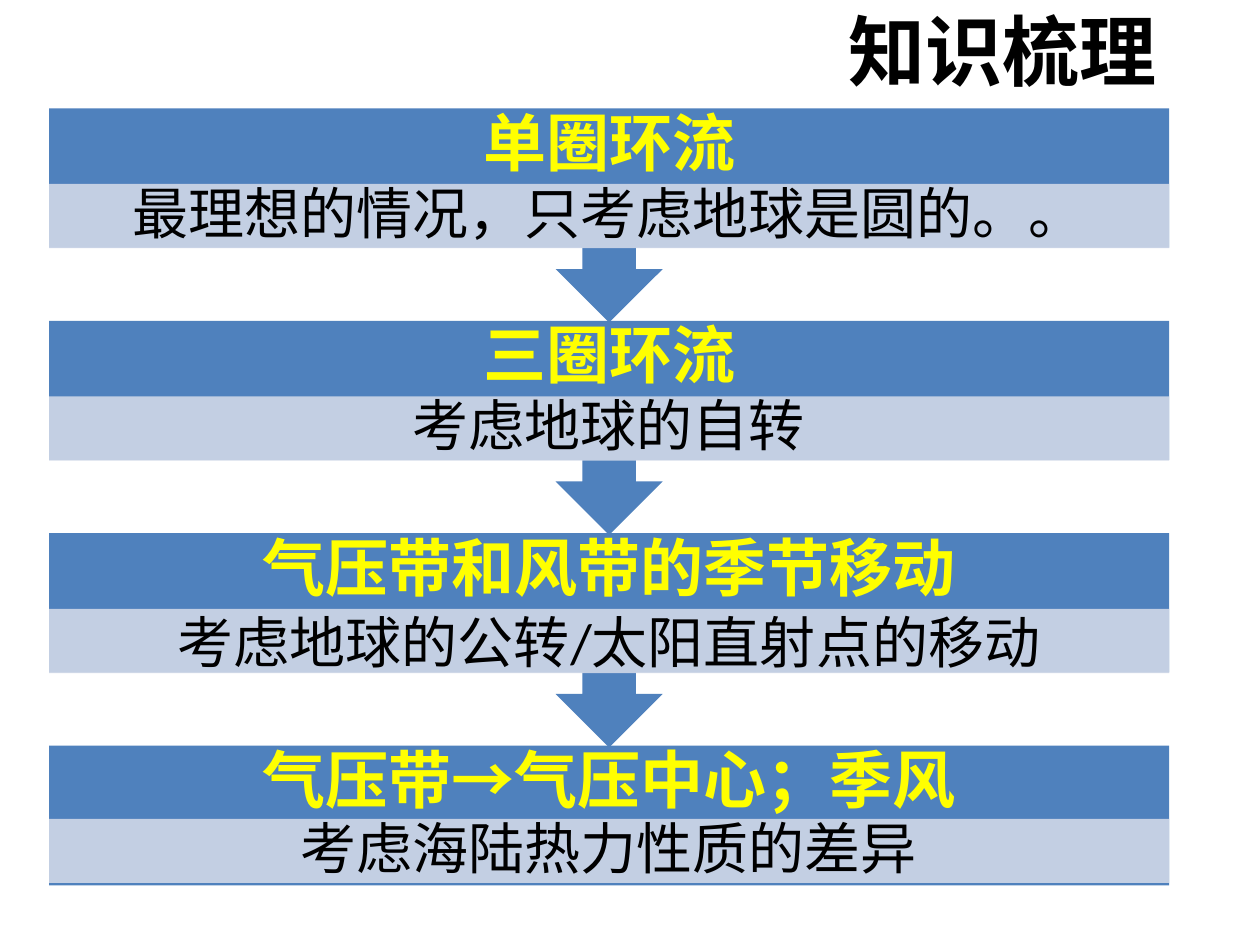
from pptx import Presentation
from pptx.dml.color import RGBColor
from pptx.enum.shapes import MSO_SHAPE as Shape
from pptx.enum.text import MSO_ANCHOR as Anchor, PP_ALIGN as Align
from pptx.oxml.xmlchemy import OxmlElement
from pptx.util import Pt

HEADING = "知识梳理"
STEPS = [
    ("单圈环流", "最理想的情况，只考虑地球是圆的。。", 0.9),
    ("三圈环流", "考虑地球的自转", 0.9),
    ("气压带和风带的季节移动", "考虑地球的公转/太阳直射点的移动", 1.0),
    ("气压带→气压中心；季风", "考虑海陆热力性质的差异", 0.9),
]
THEME = {
    "block": "4F81BD",
    "band": "D0D8E8",
    "band_opacity": 90,
    "heading": {"size": 44, "color": "000000", "bold": True},
    "step": {"size": 36, "color": "FFFF00", "bold": True},
    "reason": {"size": 32, "color": "000000", "bold": False},
    "font": "Calibri",
}
LEFT, TOP, WIDTH = 28.1, 61.9, 640
PITCH = 121.4
CALLOUT_HEIGHT, LAST_HEIGHT = 122.4, 79.9
STEP_HEIGHT, LAST_STEP_HEIGHT, BAND_HEIGHT = 43.2, 41.8, 36.7
STEP_INSETS = (20.16, 20.16)
REASON_INSETS = (18, 2.88)


def add_block(slide, kind, box, color, opacity=100):
    shape = slide.shapes.add_shape(kind, *map(Pt, box))
    shape.shadow.inherit = False
    shape.fill.solid()
    shape.fill.fore_color.rgb = RGBColor.from_string(color)
    shape.line.fill.background()
    if opacity < 100:
        alpha = OxmlElement("a:alpha")
        alpha.set("val", str(opacity * 1000))
        shape.fill._xPr.find(".//{*}srgbClr").append(alpha)
    return shape


def add_text(slide, text, box, style, insets, align=Align.CENTER, spacing=1.0):
    frame = slide.shapes.add_textbox(*map(Pt, box)).text_frame
    across, down = map(Pt, insets)
    frame_format = {
        "word_wrap": True, "vertical_anchor": Anchor.MIDDLE,
        "margin_left": across, "margin_right": across,
        "margin_top": down, "margin_bottom": down,
    }
    for name, value in frame_format.items():
        setattr(frame, name, value)
    paragraph = frame.paragraphs[0]
    paragraph.alignment = align
    paragraph.line_spacing = spacing
    run = paragraph.add_run()
    run.text = text
    font_format = {"name": THEME["font"], "size": Pt(style["size"]), "bold": style["bold"]}
    for name, value in font_format.items():
        setattr(run.font, name, value)
    run.font.color.rgb = RGBColor.from_string(style["color"])


def add_step(slide, index):
    step, reason, reason_spacing = STEPS[index]
    last = index == len(STEPS) - 1
    top = TOP + index * PITCH
    if last:
        add_block(slide, Shape.RECTANGLE, (LEFT, top, WIDTH, LAST_HEIGHT), THEME["block"])
    else:
        callout = add_block(slide, Shape.UP_ARROW_CALLOUT,
                            (LEFT, top, WIDTH, CALLOUT_HEIGHT), THEME["block"])
        callout.rotation = 180
    add_text(slide, step, (LEFT, top, WIDTH, STEP_HEIGHT), THEME["step"],
             STEP_INSETS, spacing=0.9)
    band_top = top + (LAST_STEP_HEIGHT if last else STEP_HEIGHT)
    band = (LEFT, band_top, WIDTH, BAND_HEIGHT)
    add_block(slide, Shape.RECTANGLE, band, THEME["band"], THEME["band_opacity"])
    add_text(slide, reason, band, THEME["reason"], REASON_INSETS, spacing=reason_spacing)


def main():
    presentation = Presentation()
    presentation.slide_width, presentation.slide_height = Pt(720), Pt(540)
    slide = presentation.slides.add_slide(presentation.slide_layouts[6])
    add_text(slide, HEADING, (56.2, -16.6, 612, 90), THEME["heading"],
             (7.2, 3.6), align=Align.RIGHT)
    for index in reversed(range(len(STEPS))):
        add_step(slide, index)
    presentation.save("out.pptx")


if __name__ == "__main__":
    main()
